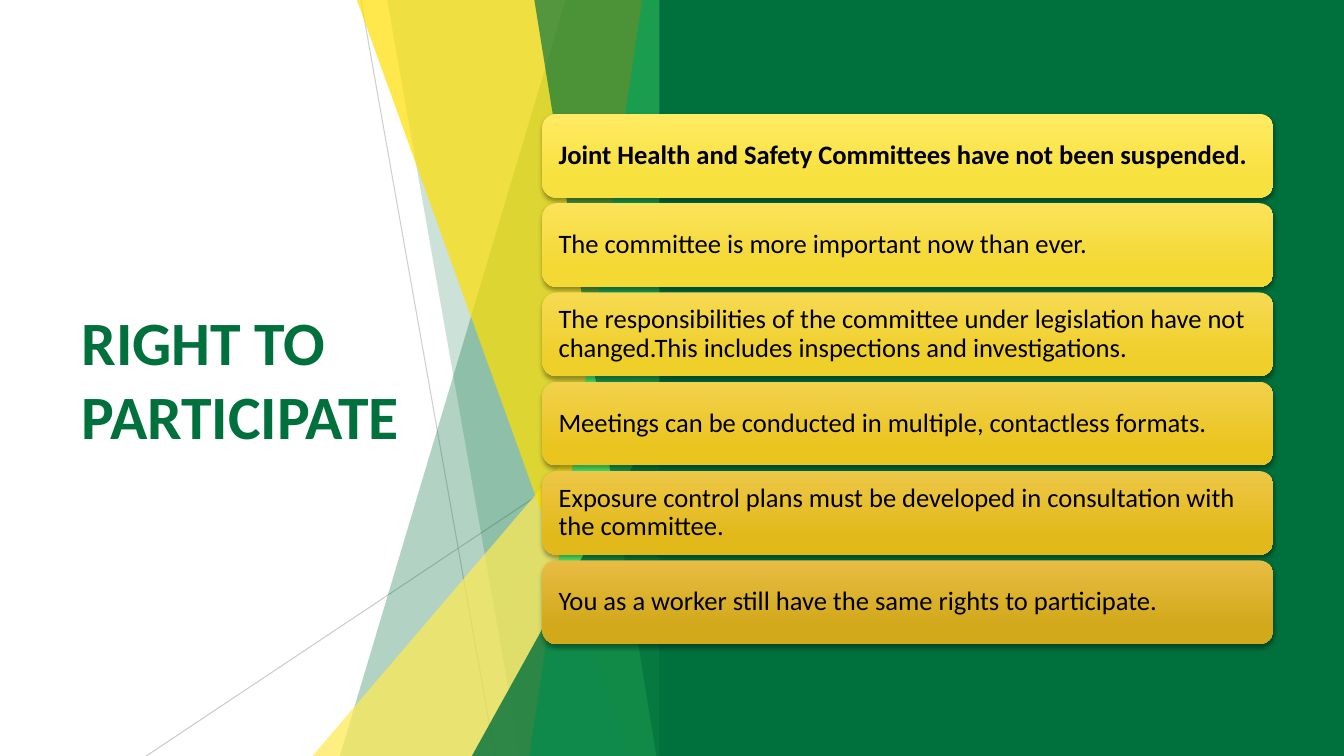
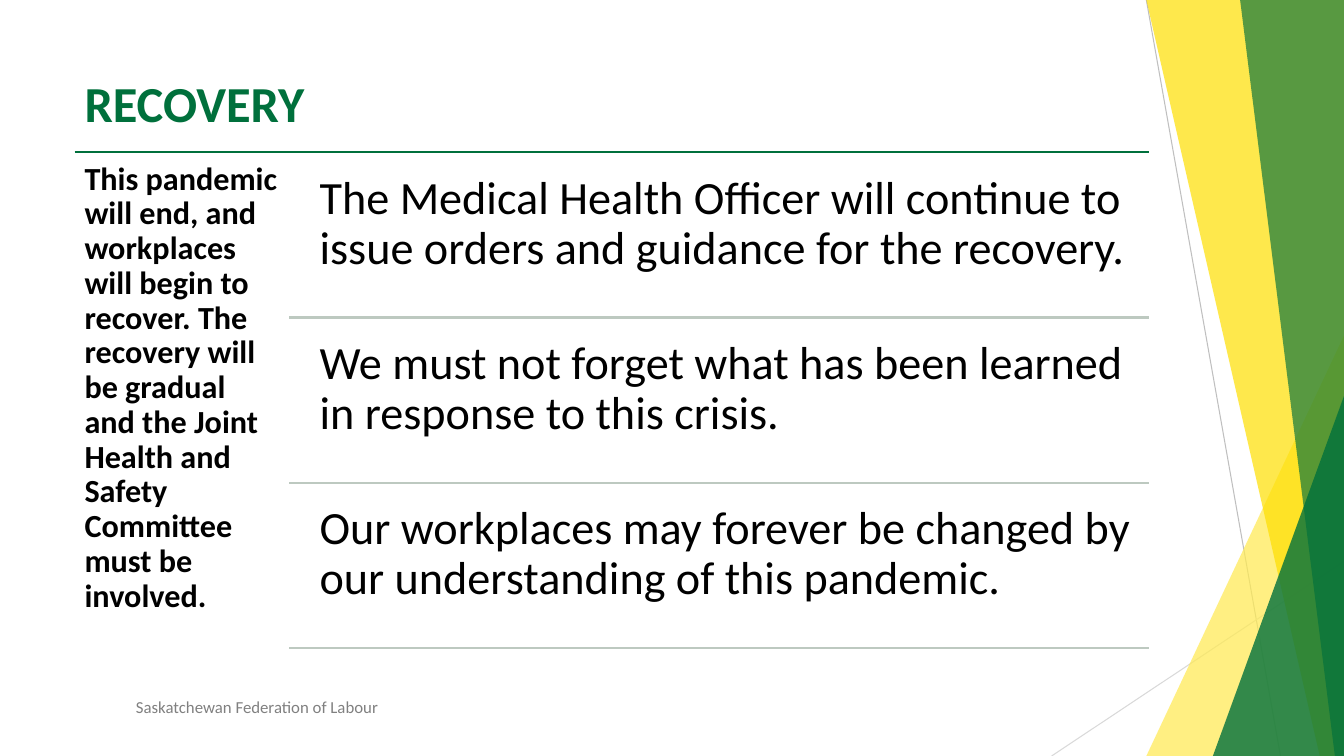
import pptx
import pptx.dml.color
import pptx.enum.shapes
import pptx.enum.text
import pptx.oxml
import pptx.oxml.ns
import pptx.util

Inches = pptx.util.Inches
Pt = pptx.util.Pt

COLOURS = {
    "green": "00703C",
    "mint": "10FF90",
    "gold": "FEDF00",
    "lemon": "FFEA53",
    "grey": "BFBFBF",
    "pale": "D9D9D9",
    "sage": "BDC9C0",
    "footer": "808080",
    "black": "000000",
}
WIDTH, HEIGHT = 13.33, 7.5
SHADOW = (
    '<a:outerShdw xmlns:a="http://schemas.openxmlformats.org/drawingml/2006/main" '
    'blurRad="38100" dist="25400" dir="5400000" algn="ctr" rotWithShape="0">'
    '<a:srgbClr val="000000"><a:alpha val="35000"/></a:srgbClr></a:outerShdw>'
)


def rgb(colour):
    return pptx.dml.color.RGBColor.from_string(COLOURS.get(colour, colour))


class Slides:
    font = "Calibri"

    def __init__(self):
        self.deck = pptx.Presentation()
        self.deck.slide_width = Inches(WIDTH)
        self.deck.slide_height = Inches(HEIGHT)
        self.page = None

    def add_page(self):
        self.page = self.deck.slides.add_slide(self.deck.slide_layouts[6])

    def set_opacity(self, shape, percent):
        if percent < 100:
            for colour in shape._element.spPr.iter(pptx.oxml.ns.qn("a:srgbClr")):
                alpha = pptx.oxml.parse_xml(
                    '<a:alpha xmlns:a="http://schemas.openxmlformats.org/drawingml/2006/main" '
                    f'val="{percent * 1000}"/>'
                )
                colour.append(alpha)

    def paint(self, shape, colour, opacity=100):
        shape.shadow.inherit = False
        shape.line.fill.background()
        shape.fill.solid()
        shape.fill.fore_color.rgb = rgb(colour)
        self.set_opacity(shape, opacity)

    def rule(self, start, end, colour, weight=0.75, opacity=100):
        line = self.page.shapes.add_connector(
            pptx.enum.shapes.MSO_CONNECTOR.STRAIGHT,
            *(Inches(value) for value in (*start, *end)),
        )
        line.line.color.rgb = rgb(colour)
        line.line.width = Pt(weight)
        line._element.spPr.append(pptx.oxml.parse_xml(
            '<a:effectLst xmlns:a="http://schemas.openxmlformats.org/drawingml/2006/main"/>'
        ))
        self.set_opacity(line, opacity)

    def shape(self, kind, left, top, width, height):
        return self.page.shapes.add_shape(
            kind, Inches(left), Inches(top), Inches(width), Inches(height)
        )

    def panel(self, left, top, width, height, colour):
        kind = pptx.enum.shapes.MSO_SHAPE.RECTANGLE
        self.paint(self.shape(kind, left, top, width, height), colour)

    def blade(self, top_left, bottom_left, right, colour, opacity):
        builder = self.page.shapes.build_freeform(Inches(top_left), 0)
        corners = [(right, 0), (right, HEIGHT), (bottom_left, HEIGHT)]
        builder.add_line_segments([(Inches(x), Inches(y)) for x, y in corners])
        self.paint(builder.convert_to_shape(), colour, opacity)

    def wedge(self, left, top, right, colour, opacity):
        kind = pptx.enum.shapes.MSO_SHAPE.ISOSCELES_TRIANGLE
        triangle = self.shape(kind, left, top, right - left, HEIGHT - top)
        triangle.adjustments[0] = 1
        self.paint(triangle, colour, opacity)

    def fan(self, right, bands):
        for draw, first, second, colour, opacity in bands:
            draw(first, second, right, colour, opacity)

    def fill_text(self, shape, text, size, colour="black", bold=False,
                  inset=(0.1, 0.05), middle=False, spacing=None):
        frame = shape.text_frame
        frame.word_wrap = True
        frame.margin_left = frame.margin_right = Inches(inset[0])
        frame.margin_top = frame.margin_bottom = Inches(inset[1])
        anchors = pptx.enum.text.MSO_ANCHOR
        frame.vertical_anchor = anchors.MIDDLE if middle else anchors.TOP
        frame.text = text
        for para in frame.paragraphs:
            para.alignment = pptx.enum.text.PP_ALIGN.LEFT
            para.line_spacing = spacing
            for span in para.runs:
                span.font.name = self.font
                span.font.size = Pt(size)
                span.font.bold = bold
                span.font.color.rgb = rgb(colour)

    def text(self, left, top, width, height, text, size, **style):
        box = self.page.shapes.add_textbox(
            Inches(left), Inches(top), Inches(width), Inches(height)
        )
        self.fill_text(box, text, size, **style)

    def title(self, left, top, width, height, text, size, middle=False):
        self.text(left, top, width, height, text, size,
                  colour="green", bold=True, middle=middle)

    def footer(self, text):
        self.text(1.25, 6.86, 4.09, 0.3, text, 12, colour="footer")

    def card(self, left, top, width, height, text, shades, bold):
        kind = pptx.enum.shapes.MSO_SHAPE.ROUNDED_RECTANGLE
        card = self.shape(kind, left, top, width, height)
        card.line.fill.background()
        card.fill.gradient()
        card.fill.gradient_angle = 270
        for stop, position, shade in zip(card.fill.gradient_stops, (0, 0.78), shades):
            stop.position = position
            stop.color.rgb = rgb(shade)
        card.shadow.inherit = False
        effects = card._element.spPr.find(pptx.oxml.ns.qn("a:effectLst"))
        effects.append(pptx.oxml.parse_xml(SHADOW))
        self.fill_text(card, text, 19, bold=bold, inset=(0.12, 0.04),
                       middle=True, spacing=0.9)


def participate(slides):
    slides.add_page()
    slides.title(0.71, 1.51, 3.88, 4.48, "RIGHT TO PARTICIPATE", 44, middle=True)
    slides.rule((3.58, 0), (4.91, HEIGHT), "grey", opacity=75)
    slides.rule((6.66, 4.03), (1.45, HEIGHT), "grey", opacity=80)
    slides.fan(6.66, [
        (slides.blade, 5.61, 3.37, "green", 30),
        (slides.blade, 3.84, 5.16, "green", 20),
        (slides.wedge, 3.1, 3.33, "lemon", 72),
        (slides.blade, 3.54, 6.24, "gold", 70),
        (slides.blade, 6.37, 5.25, "mint", 70),
        (slides.blade, 5.3, 6.51, "green", 65),
        (slides.wedge, 4.68, 3.93, "green", 80),
    ])
    slides.panel(6.54, 0, WIDTH - 6.54, HEIGHT, "green")
    cards = [
        ("Joint Health and Safety Committees have not been suspended.",
         ("FFEB63", "F7E13E")),
        ("The committee is more important now than ever.",
         ("FBE35A", "F4D833")),
        ("The responsibilities of the committee under legislation have not "
         "changed.This includes inspections and investigations.",
         ("F7DA52", "EFCF2A")),
        ("Meetings can be conducted in multiple, contactless formats.",
         ("F2D14C", "EAC520")),
        ("Exposure control plans must be developed in consultation with the committee.",
         ("EDC747", "E2B91A")),
        ("You as a worker still have the same rights to participate.",
         ("E7BC43", "D2A91B")),
    ]
    first, last = 1.13, 5.56
    pitch = (last - first) / (len(cards) - 1)
    for index, (text, shades) in enumerate(cards):
        slides.card(5.38, first + index * pitch, 7.25, 0.83, text, shades,
                    bold=index == 0)


def recovery(slides):
    slides.add_page()
    slides.rule((11.37, 0), (12.7, HEIGHT), "grey")
    slides.rule((WIDTH, 5.57), (10.43, HEIGHT), "pale")
    slides.fan(WIDTH, [
        (slides.wedge, 11.37, 3.33, "lemon", 72),
        (slides.blade, 11.37, 13.09, "gold", 70),
        (slides.blade, 12.3, 13.24, "green", 65),
        (slides.wedge, 12.03, 3.93, "green", 80),
    ])
    slides.footer("Saskatchewan Federation of Labour")
    slides.title(0.74, 0.67, 2.68, 0.85, "RECOVERY", 36)
    top, right, pitch = 1.51, 11.4, 1.64
    slides.rule((0.74, top), (right, top), "green", 1.5)
    slides.text(0.74, top, 2.13, 4.99,
                "This pandemic will end, and workplaces will begin to recover. "
                "The recovery will be gradual and the Joint Health and Safety "
                "Committee must be involved.",
                23, bold=True, inset=(0.1, 0.1), spacing=0.9)
    points = [
        "The Medical Health Officer will continue to issue orders and guidance "
        "for the recovery.",
        "We must not forget what has been learned in response to this crisis.",
        "Our workplaces may forever be changed by our understanding of this pandemic.",
    ]
    for index, point in enumerate(points):
        row = top + index * pitch
        slides.text(3.03, row + 0.08, 8.37, 1.56, point, 33,
                    inset=(0.14, 0.14), spacing=0.9)
        slides.rule((2.87, row + pitch), (right, row + pitch), "sage", 1.5)


def main():
    slides = Slides()
    participate(slides)
    recovery(slides)
    slides.deck.save("out.pptx")


if __name__ == "__main__":
    main()
